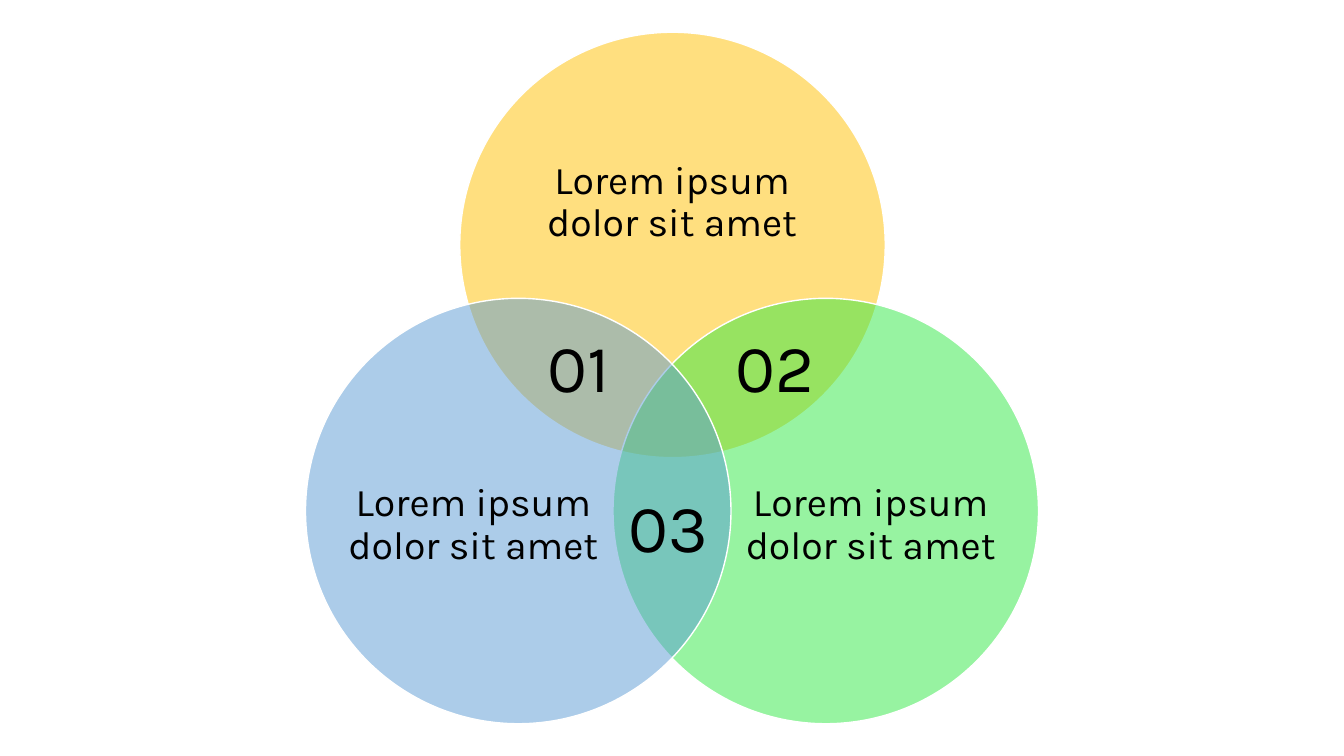
from pptx import Presentation
from pptx.dml.color import RGBColor as Rgb
from pptx.enum.shapes import MSO_SHAPE as Form
from pptx.enum.text import MSO_ANCHOR as Anchor, PP_ALIGN as Align
from pptx.oxml.xmlchemy import OxmlElement as Node
from pptx.util import Inches, Pt

WIDE, HIGH = 13.33, 7.5
COLORS = {
    "gold": "FFC000",
    "green": "30E845",
    "blue": "5B9BD5",
    "white": "FFFFFF",
    "black": "000000",
}
LOREM = "Lorem ipsum dolor sit amet"
DISC = 4.22
CIRCLES = [
    ("gold", (1.53, 0), (2.09, 0.74, 3.09, 1.9)),
    ("green", (3.05, 2.64), (4.34, 3.73, 2.53, 2.32)),
    ("blue", (0, 2.64), (0.4, 3.73, 2.53, 2.32)),
]
LABELS = [("01", 2.3, 2.86), ("02", 4.17, 2.86), ("03", 3.11, 4.45)]


def color(name):
    return Rgb.from_string(COLORS[name])


def inch(*sizes):
    return [Inches(size) for size in sizes]


def write(shapes, box, words, size, align=Align.LEFT, anchor=Anchor.TOP,
          inset=None, space=1.0):
    frame = shapes.add_textbox(*inch(*box)).text_frame
    frame.word_wrap = True
    frame.vertical_anchor = anchor
    if inset is not None:
        frame.margin_left = frame.margin_right = Inches(inset)
        frame.margin_top = frame.margin_bottom = Inches(inset)
    para = frame.paragraphs[0]
    para.alignment = align
    para.line_spacing = space
    run = para.add_run()
    run.text = words
    run.font.size = Pt(size)
    run.font.name = "Karla"
    run.font.color.rgb = color("black")


def circle(shapes, left, top, tint):
    disc = shapes.add_shape(Form.OVAL, *inch(left, top, DISC, DISC))
    disc.shadow.inherit = False
    disc.fill.solid()
    disc.fill.fore_color.rgb = color(tint)
    alpha = Node("a:alpha")
    alpha.set("val", "50000")
    disc.fill._xPr.find(".//{*}srgbClr").append(alpha)
    disc.line.color.rgb = color("white")
    disc.line.width = Pt(1)


def venn(slide, left, top):
    group = slide.shapes.add_group_shape().shapes
    for tint, (x, y), (dx, dy, wide, high) in CIRCLES:
        circle(group, left + x, top + y, tint)
        write(group, (left + dx, top + dy, wide, high), LOREM, size=28,
              align=Align.CENTER, anchor=Anchor.MIDDLE, inset=0, space=0.9)
    for words, x, y in LABELS:
        write(slide.shapes, (left + x, top + y, 1.06, 0.91), words, size=48)


def main():
    deck = Presentation()
    deck.slide_width, deck.slide_height = inch(WIDE, HIGH)
    slide = deck.slides.add_slide(deck.slide_layouts[6])
    venn(slide, left=3.03, top=0.32)
    deck.save("out.pptx")


if __name__ == "__main__":
    main()
